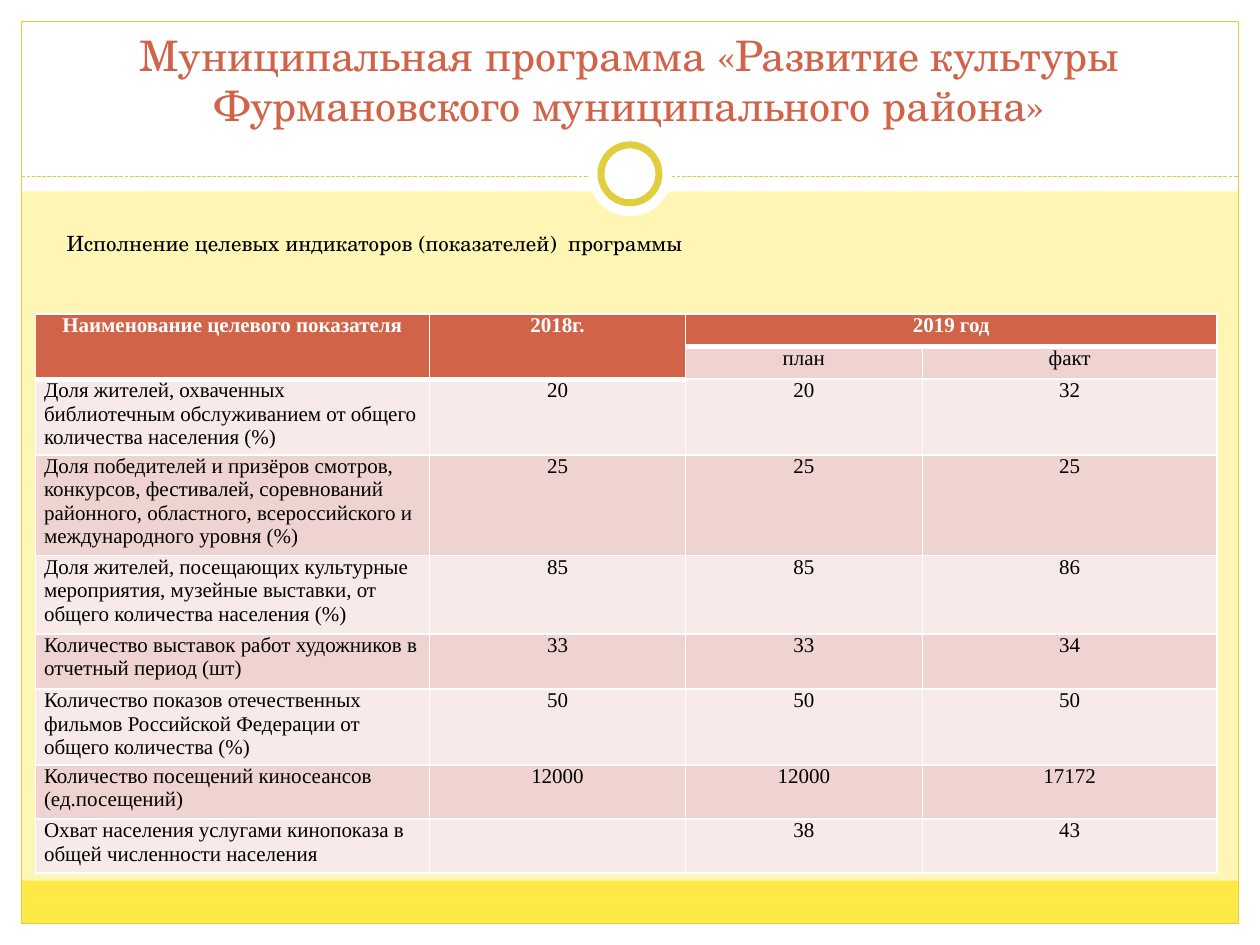
from dataclasses import dataclass
from pptx import Presentation
from pptx.dml.color import RGBColor
from pptx.enum.dml import MSO_LINE as Dash
from pptx.enum.shapes import MSO_CONNECTOR as Link, MSO_SHAPE as Kind
from pptx.enum.text import MSO_ANCHOR as Anchor, PP_ALIGN as Align
from pptx.oxml.ns import qn
from pptx.util import Inches, Pt
from lxml.etree import SubElement as sub

COLS, ROWS = 1000, 750  # slide grid
UNIT = Inches(0.01)


@dataclass(frozen=True)
class Theme:
    white: str = "FFFFFF"
    black: str = "000000"
    page: str = "FFF6B5"
    foot: str = "FFE947"
    gold: str = "E1CE3F"
    red: str = "D16349"
    dark: str = "EED3D0"
    pale: str = "F7EAE9"
    serif: str = "TeX Gyre Schola"
    roman: str = "Times New Roman"
    head: int = 24
    body: int = 12
    thin: float = 0.75
    ring: int = 4
    rule: int = 1
    bar: int = 3


T = Theme()

HEADS = [["Наименование целевого показателя", "2018г.", "2019 год", ""],
         ["", "", "план", "факт"]]
DATA = [
    ["Доля жителей, охваченных библиотечным обслуживанием от общего "
     "количества населения (%)", "20", "20", "32"],
    ["Доля победителей и призёров смотров, конкурсов, фестивалей, "
     "соревнований районного, областного, всероссийского и международного "
     "уровня (%)", "25", "25", "25"],
    ["Доля жителей, посещающих культурные мероприятия, музейные выставки, "
     "от общего количества населения (%)", "85", "85", "86"],
    ["Количество выставок работ художников в отчетный период (шт)",
     "33", "33", "34"],
    ["Количество показов отечественных фильмов Российской Федерации от "
     "общего количества (%)", "50", "50", "50"],
    ["Количество посещений киносеансов (ед.посещений)",
     "12000", "12000", "17172"],
    ["Охват населения услугами кинопоказа в общей численности населения",
     "", "38", "43"],
]
WIDTHS = [313, 203, 188, 234]
HEIGHTS = [26, 26, 57, 78, 62, 44, 53, 43, 43]


def rgb(code):
    return RGBColor.from_string(code)


def grid(*cells):
    return [UNIT * n for n in cells]


def shape(slide, kind, box, fill=None, line=None, width=T.thin):
    item = slide.shapes.add_shape(kind, *grid(*box))
    item.shadow.inherit = False
    if fill:
        item.fill.solid()
        item.fill.fore_color.rgb = rgb(fill)
    else:
        item.fill.background()
    if line:
        item.line.color.rgb = rgb(line)
        item.line.width = Pt(width)
    else:
        item.line.fill.background()


def write(para, text, font, size, color, bold=False):
    run = para.add_run()
    run.text = text
    face = run.font
    face.name, face.size, face.bold = font, Pt(size), bold
    face.color.rgb = rgb(color)


def label(slide, box, text, size, color, align=Align.LEFT, anchor=Anchor.TOP):
    frame = slide.shapes.add_textbox(*grid(*box)).text_frame
    frame.word_wrap = True
    frame.vertical_anchor = anchor
    para = frame.paragraphs[0]
    para.alignment = align
    write(para, text, T.serif, size, color)


def border(slide, box):
    """White margins and top band, footer strip and outline around box."""
    x, y, w, h = box
    right, base = x + w, y + h
    for edge in [(0, base, COLS, ROWS - base), (0, 0, COLS, 152),
                 (0, 0, x, ROWS), (right, 0, COLS - right, ROWS)]:
        shape(slide, Kind.RECTANGLE, edge, T.white)
    shape(slide, Kind.RECTANGLE, (x, base - 34, w, 34), T.foot)
    shape(slide, Kind.RECTANGLE, box, line=T.gold)


def divide(slide, box):
    """Dashed rule along the top of box, with a ring at its centre."""
    x, y, w, _ = box
    rule = slide.shapes.add_connector(
        Link.STRAIGHT, *grid(x, y, x + w, y))
    rule.line.color.rgb = rgb(T.gold)
    rule.line.width = Pt(T.thin)
    rule.line.dash_style = Dash.SQUARE_DOT
    sub(rule._element.spPr, qn("a:effectLst"))
    mid = x + w / 2
    for size, line in [(67, None), (46, T.gold)]:
        spot = (mid - size / 2, y - 2 - size / 2, size, size)
        shape(slide, Kind.OVAL, spot, T.white, line, T.ring)


def edges(cell, base):
    """White cell borders; base is the width of the bottom one."""
    props = cell._tc.get_or_add_tcPr()
    for side, width in zip("LRTB", [T.rule] * 3 + [base]):
        line = sub(props, qn(f"a:ln{side}"), w=str(Pt(width)))
        fill = sub(line, qn("a:solidFill"))
        sub(fill, qn("a:srgbClr"), val=T.white)


def fill_cell(cell, text, fill, align, head=False):
    edges(cell, T.bar if head else T.rule)
    cell.fill.solid()
    cell.fill.fore_color.rgb = rgb(fill)
    cell.margin_left = cell.margin_right = UNIT * 7
    cell.margin_top = cell.margin_bottom = 0
    para = cell.text_frame.paragraphs[0]
    para.alignment = align
    if text:
        color = T.white if head else T.black
        write(para, text, T.roman, T.body, color, head)


def scores(slide, box):
    rows = HEADS + DATA
    table = slide.shapes.add_table(
        len(rows), len(WIDTHS), *grid(*box)).table
    for col, width in zip(table.columns, WIDTHS):
        col.width = UNIT * width
    for row, height in zip(table.rows, HEIGHTS):
        row.height = UNIT * height
    for r, row in enumerate(rows):
        for c, text in enumerate(row):
            head = r == 0 or (r == 1 and c < 2)
            fill = T.red if head else T.dark if r % 2 else T.pale
            left = c == 0 and r >= len(HEADS)
            align = Align.LEFT if left else Align.CENTER
            fill_cell(table.cell(r, c), text, fill, align, head)
    for first, last in [((0, 0), (1, 0)), ((0, 1), (1, 1)), ((0, 2), (0, 3))]:
        table.cell(*first).merge(table.cell(*last))


def main():
    deck = Presentation()
    deck.slide_width, deck.slide_height = grid(COLS, ROWS)
    slide = deck.slides.add_slide(deck.slide_layouts[6])
    back = slide.background.fill
    back.solid()
    back.fore_color.rgb = rgb(T.page)
    border(slide, (17, 17, 966, 716))
    divide(slide, (17, 140, 966, 0))
    label(slide, (33, 25, 933, 83),
          "Муниципальная программа «Развитие культуры Фурмановского "
          "муниципального района»",
          T.head, T.red, Align.CENTER, Anchor.BOTTOM)
    label(slide, (43, 178, 680, 50),
          "Исполнение целевых индикаторов (показателей)  программы",
          T.body, T.black)
    scores(slide, (28, 249, sum(WIDTHS), sum(HEIGHTS)))
    deck.save("out.pptx")


if __name__ == "__main__":
    main()
